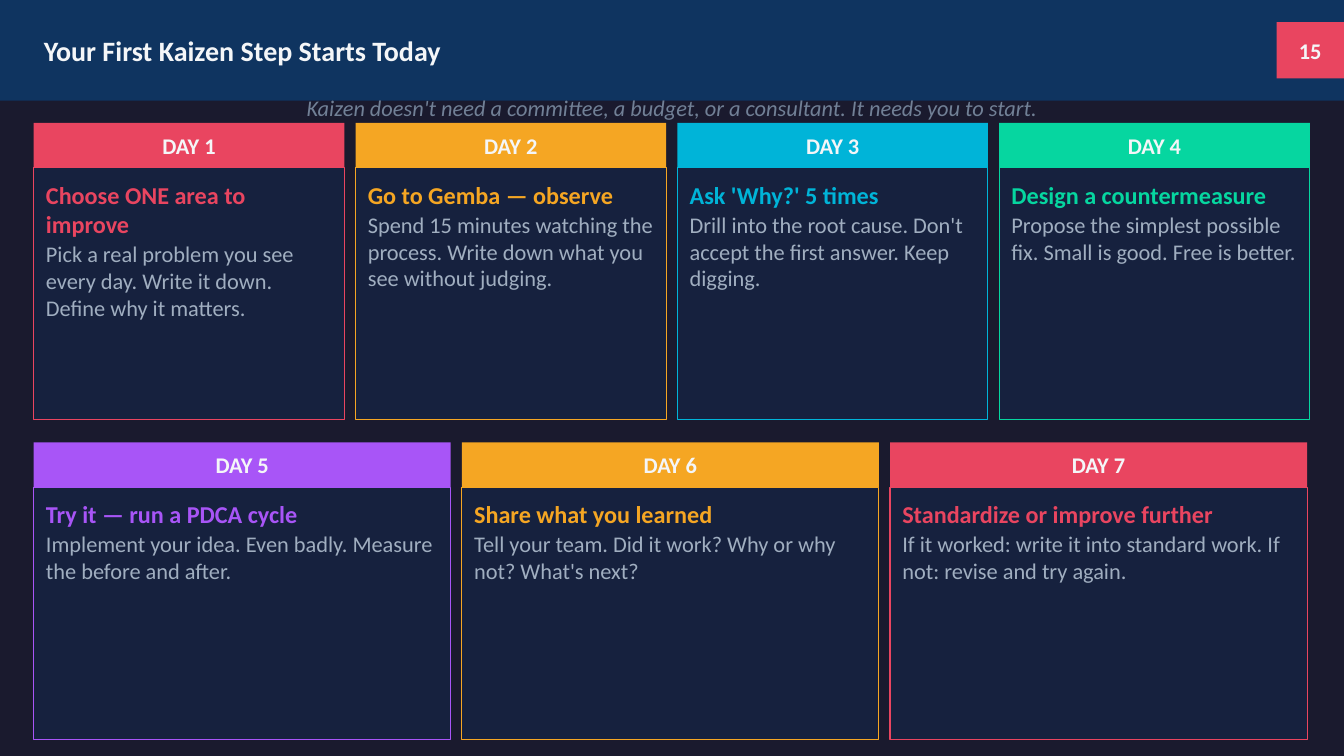
from dataclasses import dataclass

from pptx import Presentation
from pptx.dml.color import RGBColor
from pptx.enum.shapes import MSO_SHAPE
from pptx.enum.text import MSO_ANCHOR, MSO_AUTO_SIZE, PP_ALIGN
from pptx.util import Cm, Pt

RECTANGLE = MSO_SHAPE.RECTANGLE
TOP, MIDDLE = MSO_ANCHOR.TOP, MSO_ANCHOR.MIDDLE
LEFT, CENTER = PP_ALIGN.LEFT, PP_ALIGN.CENTER
NO_AUTOFIT = MSO_AUTO_SIZE.NONE


@dataclass(frozen=True)
class Theme:
    font: str = "Calibri"
    background: str = "1A1A2E"
    band: str = "0F3460"
    card: str = "16213E"
    light: str = "F4F6F8"
    muted: str = "718096"
    body: str = "A0AEC0"
    red: str = "E94560"
    orange: str = "F5A623"
    cyan: str = "00B4D8"
    green: str = "06D6A0"
    purple: str = "A855F7"
    title_size: float = 20
    heading_size: float = 17.3
    text_size: float = 16


theme = Theme()


def add_box(left, top, width, height, fill, line=None):
    shape = slide.shapes.add_shape(RECTANGLE, Cm(left), Cm(top), Cm(width), Cm(height))
    shape.shadow.inherit = False
    shape.fill.solid()
    shape.fill.fore_color.rgb = RGBColor.from_string(fill)
    if line:
        shape.line.color.rgb = RGBColor.from_string(line)
        shape.line.width = Pt(0.75)
    else:
        shape.line.fill.background()
    return shape


def write(shape, lines, align=CENTER, anchor=MIDDLE):
    """Fill a shape with paragraphs given as (text, size, color, bold, italic)."""
    frame = shape.text_frame
    frame.word_wrap = True
    frame.auto_size = NO_AUTOFIT
    frame.vertical_anchor = anchor
    frame.text = "\n".join(line[0] for line in lines)
    for paragraph, (_, size, color, bold, italic) in zip(frame.paragraphs, lines):
        paragraph.alignment = align
        font = paragraph.runs[0].font
        font.name, font.size = theme.font, Pt(size)
        font.bold, font.italic = bold, italic
        font.color.rgb = RGBColor.from_string(color)


# Slide and background
presentation = Presentation()
presentation.slide_width, presentation.slide_height = Cm(33.87), Cm(19.05)
slide = presentation.slides.add_slide(presentation.slide_layouts[5])
slide.background.fill.solid()
slide.background.fill.fore_color.rgb = RGBColor.from_string(theme.background)

# Title band, with the title placed in front of it
band = add_box(0, 0, 33.87, 2.54, theme.band)
title = slide.shapes.title
band.element.addnext(title.element)
title.left, title.top, title.width, title.height = Cm(0.85), Cm(0.28), Cm(28.22), Cm(1.98)
write(title, [("Your First Kaizen Step Starts Today", theme.title_size, theme.light, True, False)], LEFT)

# Page number
badge = add_box(32.17, 0.56, 1.7, 1.42, theme.red)
write(badge, [("15", theme.text_size, theme.light, True, False)])

# Tagline, centred on its own height
tagline = slide.shapes.add_textbox(Cm(0.85), Cm(2.72), Cm(32.17), Cm(0))
write(tagline, [("Kaizen doesn't need a committee, a budget, or a consultant. It needs you to start.",
                 theme.text_size, theme.muted, False, True)])

# Day cards: each row has its top, card width and cards
rows = [
    (3.1, 7.83, [
        (theme.red, "Choose ONE area to improve",
         "Pick a real problem you see every day. Write it down. Define why it matters."),
        (theme.orange, "Go to Gemba — observe",
         "Spend 15 minutes watching the process. Write down what you see without judging."),
        (theme.cyan, "Ask 'Why?' 5 times",
         "Drill into the root cause. Don't accept the first answer. Keep digging."),
        (theme.green, "Design a countermeasure",
         "Propose the simplest possible fix. Small is good. Free is better."),
    ]),
    (11.15, 10.51, [
        (theme.purple, "Try it — run a PDCA cycle",
         "Implement your idea. Even badly. Measure the before and after."),
        (theme.orange, "Share what you learned",
         "Tell your team. Did it work? Why or why not? What's next?"),
        (theme.red, "Standardize or improve further",
         "If it worked: write it into standard work. If not: revise and try again."),
    ]),
]
margin, gap, header_height, card_height = 0.85, 0.28, 1.13, 6.35
day = 0
for top, width, cards in rows:
    for column, (accent, heading, text) in enumerate(cards):
        day += 1
        left = margin + column * (width + gap)
        header = add_box(left, top, width, header_height, accent)
        write(header, [(f"DAY {day}", theme.text_size, theme.light, True, False)])

        card = add_box(left, top + header_height, width, card_height, theme.card, accent)
        frame = card.text_frame
        frame.margin_left = frame.margin_top = frame.margin_right = Cm(0.31)
        write(card, [(heading, theme.heading_size, accent, True, False),
                     (text, theme.text_size, theme.body, False, False)], LEFT, TOP)
        frame.paragraphs[1].space_before = Pt(1.2)

presentation.save("out.pptx")
